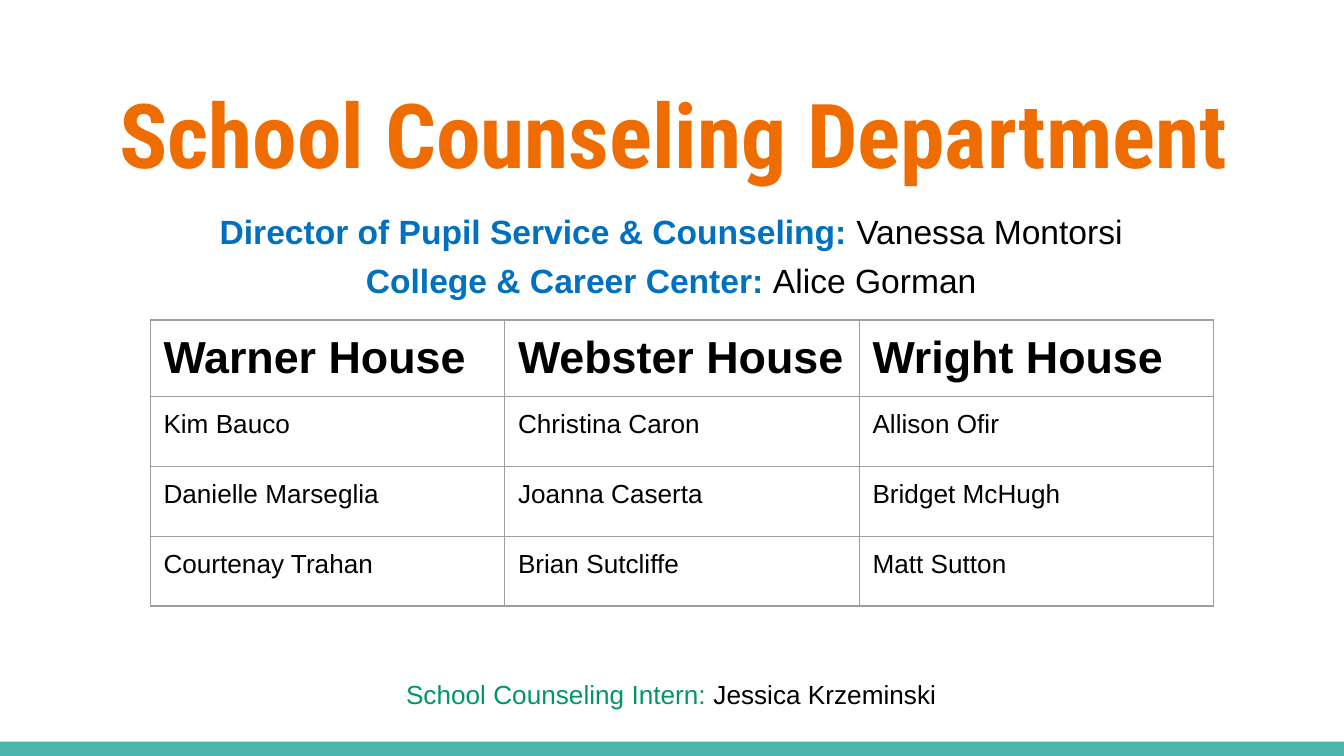
from lxml import etree
from pptx import Presentation
from pptx.dml.color import RGBColor
from pptx.enum.shapes import MSO_SHAPE
from pptx.enum.text import MSO_ANCHOR, MSO_AUTO_SIZE, PP_ALIGN
from pptx.oxml.ns import qn
from pptx.util import Cm, Pt

RECT = MSO_SHAPE.RECTANGLE
TOP = MSO_ANCHOR.TOP
NO_FIT = MSO_AUTO_SIZE.NONE
CENTER = PP_ALIGN.CENTER
LEFT = PP_ALIGN.LEFT

HUES = {
    "bar": "4DB6AC", "title": "EF6C00", "role": "0070C0", "intern": "009668",
    "text": "000000", "cell": "FFFFFF", "border": "9E9E9E",
}
MARGINS = {"margin_left": Cm(0.25), "margin_top": Cm(0.25),
           "margin_right": Cm(0.25), "margin_bottom": Cm(0.25)}
FRAME = {**MARGINS, "word_wrap": True, "auto_size": NO_FIT, "vertical_anchor": TOP}

STAFF = [
    ["Warner House", "Webster House", "Wright House"],
    ["Kim Bauco", "Christina Caron", "Allison Ofir"],
    ["Danielle Marseglia", "Joanna Caserta", "Bridget McHugh"],
    ["Courtenay Trahan", "Brian Sutcliffe", "Matt Sutton"],
]
# Each line: its runs as (text, hue, bold), text size, space before
LINES = [
    ([("Director of Pupil Service & Counseling: ", "role", True),
      ("Vanessa Montorsi", "text", False)], 18, 0),
    ([("College & Career Center: ", "role", True),
      ("Alice Gorman", "text", False)], 18, 1.4),
    ([("School Counseling Intern:", "intern", False),
      (" Jessica Krzeminski", "text", False)], 14, 200),
]


def apply(item, values):
    for name, value in values.items():
        setattr(item, name, value)


def place(item, left, top, width, height):
    apply(item, {"left": Cm(left), "top": Cm(top),
                 "width": Cm(width), "height": Cm(height)})


class Deck:
    def __init__(self, width, height):
        self.show = Presentation()
        apply(self.show, {"slide_width": Cm(width), "slide_height": Cm(height)})
        self.slide = self.show.slides.add_slide(self.show.slide_layouts[1])

    def hue(self, name):
        return RGBColor.from_string(HUES[name])

    def run(self, para, text, hue, size, bold, face="Arial"):
        run = para.add_run()
        run.text = text
        apply(run.font, {"name": face, "size": Pt(size), "bold": bold})
        run.font.color.rgb = self.hue(hue)

    def bar(self, *box):
        bar = self.slide.shapes.add_shape(RECT, *map(Cm, box))
        bar.shadow.inherit = False
        bar.fill.solid()
        bar.fill.fore_color.rgb = self.hue("bar")
        bar.line.fill.background()

    def title(self, text, *box):
        title = self.slide.shapes.title
        place(title, *box)
        apply(title.text_frame, FRAME)
        para = title.text_frame.paragraphs[0]
        apply(para, {"alignment": CENTER, "line_spacing": 1.0})
        self.run(para, text, "title", 48, True, "Roboto Condensed")

    def body(self, lines, *box):
        body = self.slide.placeholders[1]
        place(body, *box)
        frame = body.text_frame
        apply(frame, FRAME)
        for i, (runs, size, gap) in enumerate(lines):
            para = frame.add_paragraph() if i else frame.paragraphs[0]
            apply(para, {"alignment": CENTER, "line_spacing": 1.15,
                         "space_before": Pt(gap), "space_after": Pt(0)})
            props = para._p.get_or_add_pPr()
            props.set("marL", "0")
            props.set("indent", "0")
            etree.SubElement(props, qn("a:buNone"))
            for text, hue, bold in runs:
                self.run(para, text, hue, size, bold)

    def border(self, cell):
        props = cell._tc.get_or_add_tcPr()
        for side in ("lnL", "lnR", "lnT", "lnB"):
            line = etree.SubElement(props, qn("a:" + side), w=str(Pt(0.75)))
            fill = etree.SubElement(line, qn("a:solidFill"))
            etree.SubElement(fill, qn("a:srgbClr"), val=HUES["border"])

    def table(self, rows, left, top, col, head, row):
        count = len(rows[0])
        tall = head + row * (len(rows) - 1)
        box = map(Cm, (left, top, col * count, tall))
        table = self.slide.shapes.add_table(len(rows), count, *box).table
        for column in table.columns:
            column.width = Cm(col)
        for i, names in enumerate(rows):
            table.rows[i].height = Cm(row if i else head)
            for j, name in enumerate(names):
                cell = table.cell(i, j)
                apply(cell, {**MARGINS, "vertical_anchor": TOP})
                self.border(cell)
                cell.fill.solid()
                cell.fill.fore_color.rgb = self.hue("cell")
                para = cell.text_frame.paragraphs[0]
                para.alignment = LEFT
                self.run(para, name, "text", 14 if i else 24, i == 0)


def main():
    deck = Deck(25.4, 14.29)
    deck.bar(0, 14.02, 25.4, 0.27)
    deck.title("School Counseling Department", 1.32, 1.24, 22.83, 2.13)
    deck.body(LINES, 0.15, 3.63, 25.07, 10.29)
    deck.table(STAFF, 2.84, 6.05, 6.7, 1.37, 1.32)
    deck.show.save("out.pptx")


if __name__ == "__main__":
    main()
